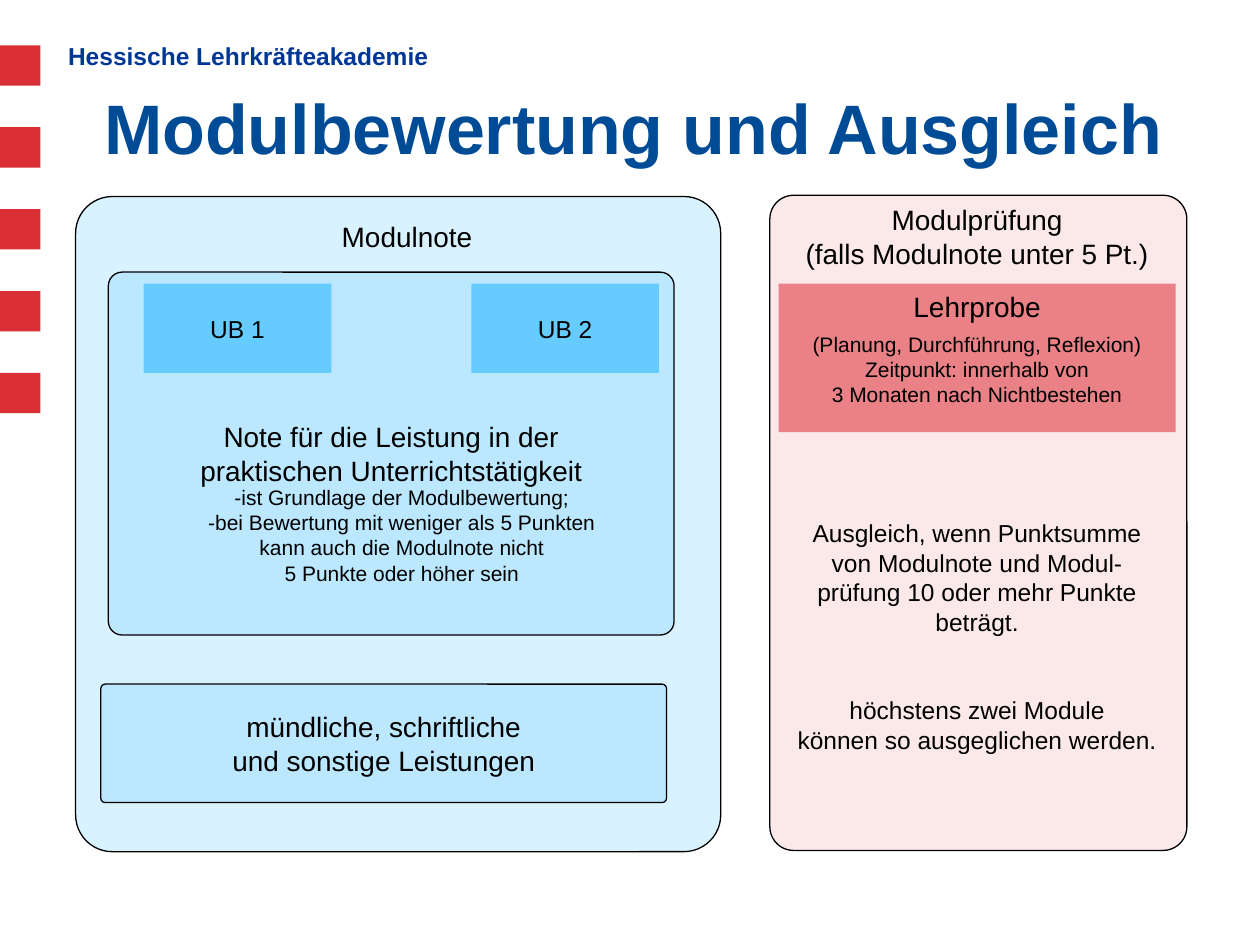
from pptx import Presentation
from pptx.dml.color import RGBColor
from pptx.enum.shapes import MSO_SHAPE
from pptx.enum.text import MSO_ANCHOR, PP_ALIGN
from pptx.oxml.ns import qn
from pptx.util import Inches, Pt
from lxml.etree import SubElement

COLORS = {
    "red": "DB2F36", "header": "003695", "title": "004B95", "black": "000000",
    "blue": "66CCFF", "pink": "F1ABAF", "exam": "E98186",
}
FONT = "Arial"


def rgb(name):
    return RGBColor.from_string(COLORS[name])


def write(frame, paragraphs, color="black", bold=False, align=PP_ALIGN.CENTER,
          anchor=MSO_ANCHOR.MIDDLE):
    """Fill a frame from (text, size, space before) tuples; \\v breaks a line."""
    frame.word_wrap = True
    frame.vertical_anchor = anchor
    for i, (text, size, before) in enumerate(paragraphs):
        paragraph = frame.add_paragraph() if i else frame.paragraphs[0]
        paragraph.text = text
        paragraph.alignment = align
        if before:
            paragraph.space_before = Pt(before)
        paragraph.font.name = FONT
        paragraph.font.size = Pt(size)
        paragraph.font.bold = bold
        paragraph.font.color.rgb = rgb(color)


def add_label(slide, left, top, width, height, paragraphs, **style):
    label = slide.shapes.add_textbox(
        Inches(left), Inches(top), Inches(width), Inches(height))
    write(label.text_frame, paragraphs, **style)
    return label.text_frame


def add_box(slide, left, top, width, height, fill, paragraphs=(), **style):
    box = slide.shapes.add_shape(
        MSO_SHAPE.RECTANGLE, Inches(left), Inches(top), Inches(width), Inches(height))
    box.shadow.inherit = False
    box.fill.solid()
    box.fill.fore_color.rgb = rgb(fill)
    box.line.fill.background()
    write(box.text_frame, paragraphs, **style)


def add_panel(slide, left, top, width, height, fill, radius, paragraphs=()):
    """Outlined rounded panel with a 25 % opaque fill."""
    panel = slide.shapes.add_shape(
        MSO_SHAPE.ROUNDED_RECTANGLE,
        Inches(left), Inches(top), Inches(width), Inches(height))
    panel.adjustments[0] = radius
    panel.shadow.inherit = False
    panel.fill.solid()
    panel.fill.fore_color.rgb = rgb(fill)
    fill_color = panel.fill._xPr.find(qn("a:solidFill"))[0]
    SubElement(fill_color, qn("a:alpha")).set("val", "25000")
    panel.line.color.rgb = rgb("black")
    panel.line.width = Pt(0.75)
    write(panel.text_frame, paragraphs)


def add_header(slide, left, top):
    # Red squares down the left edge
    for i in range(5):
        add_box(slide, 0, top + 0.06 + i * 0.65, 0.32, 0.32, "red")
    # Institution and title
    institution = add_label(
        slide, left, top, 8.03, 0.31, [("Hessische Lehrkräfteakademie", 14, 0)],
        color="header", bold=True, align=PP_ALIGN.LEFT, anchor=MSO_ANCHOR.TOP)
    institution.margin_left = institution.margin_right = 0
    institution.paragraphs[0].line_spacing = 0.9
    add_label(slide, left + 0.19, top + 0.32, 8.9, 0.77,
              [("Modulbewertung und Ausgleich", 40, 0)],
              color="title", bold=True, align=PP_ALIGN.LEFT)


def add_module_grade(slide, left, top, width, height):
    add_panel(slide, left, top, width, height, "blue", 0.057)
    add_label(slide, left + 0.23, top - 0.04, 4.8, 0.71, [("Modulnote", 16, 0)])
    # Practical teaching
    add_panel(slide, left + 0.26, top + 0.6, 4.49, 2.88, "blue", 0.038, [
        ("Note für die Leistung in der\vpraktischen Unterrichtstätigkeit", 16, 0)])
    for i in range(2):
        add_box(slide, left + 0.54 + i * 2.6, top + 0.69, 1.49, 0.71, "blue",
                [(f"UB {i + 1}", 14, 0)])
    add_label(slide, left + 0.54, top + 2.21, 4.1, 0.95, [
        ("-ist Grundlage der Modulbewertung;", 12, 0),
        ("-bei Bewertung mit weniger als 5 Punkten\v"
         "kann auch die Modulnote nicht\v5 Punkte oder höher sein", 12, 0)])
    # Other work
    add_panel(slide, left + 0.2, top + 3.87, 4.49, 0.94, "blue", 0.038, [
        ("mündliche, schriftliche\vund sonstige Leistungen", 16, 0)])


def add_module_exam(slide, left, top, width, height):
    add_panel(slide, left, top, width, height, "pink", 0.057)
    inner_left, inner_width = left + 0.07, 3.15
    add_label(slide, inner_left, top - 0.03, inner_width, 0.71, [
        ("Modulprüfung\v(falls Modulnote unter 5 Pt.)", 16, 0)])
    # Trial lesson
    add_box(slide, inner_left, top + 0.7, inner_width, 1.18, "exam", [
        ("Lehrprobe", 16, 0),
        ("(Planung, Durchführung, Reflexion)\vZeitpunkt: innerhalb von\v"
         "3 Monaten nach Nichtbestehen", 12, 4.5)], anchor=MSO_ANCHOR.TOP)
    # Compensation rule
    add_label(slide, inner_left, top + 2.36, inner_width, 2.28, [
        ("Ausgleich, wenn Punktsumme\vvon Modulnote und Modul-\v"
         "prüfung 10 oder mehr Punkte\vbeträgt.", 14, 0),
        ("höchstens zwei Module\vkönnen so ausgeglichen werden.", 14, 34)])


def main():
    prs = Presentation()
    prs.slide_width, prs.slide_height = Inches(10), Inches(7.5)
    slide = prs.slides.add_slide(prs.slide_layouts[6])
    add_header(slide, 0.54, 0.3)
    add_module_grade(slide, 0.6, 1.56, 5.12, 5.2)
    add_module_exam(slide, 6.11, 1.55, 3.31, 5.2)
    prs.save("out.pptx")


if __name__ == "__main__":
    main()
